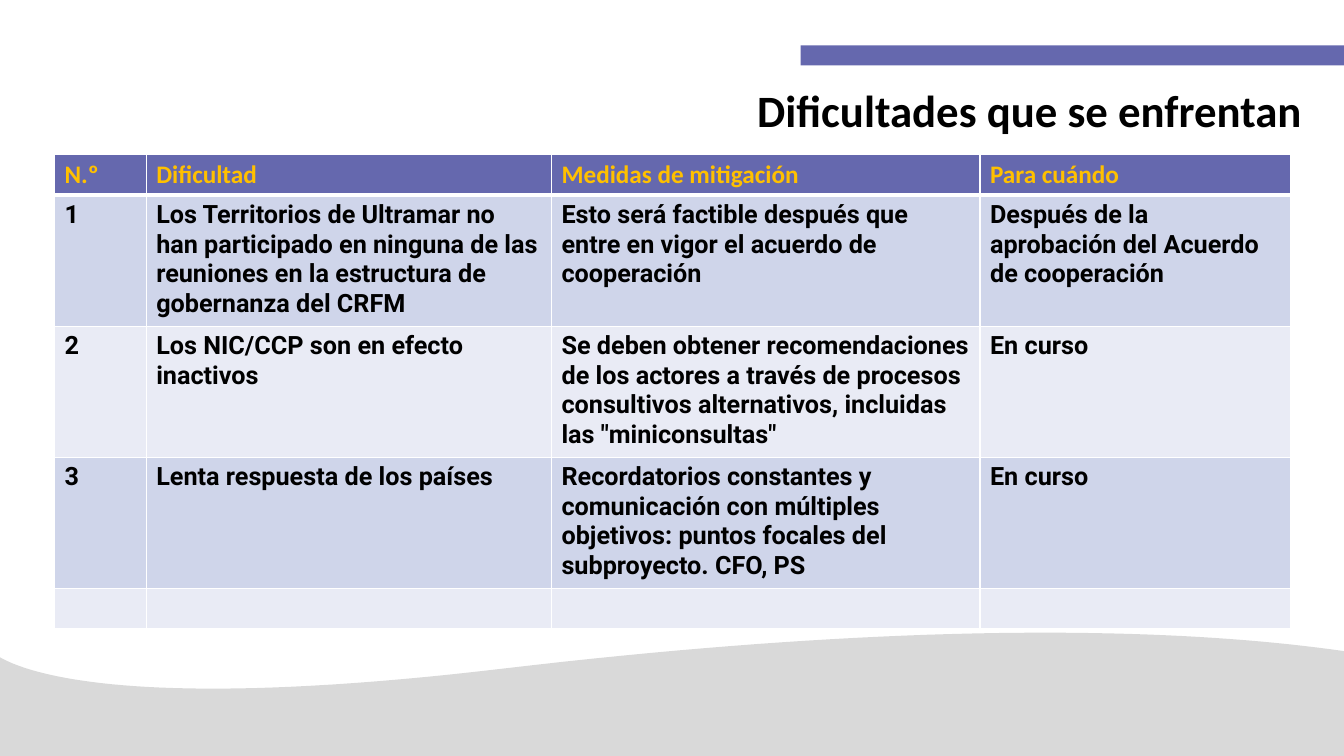
from lxml import etree
from pptx import Presentation
from pptx.dml.color import RGBColor
from pptx.enum import shapes, text
from pptx.oxml import ns
from pptx.util import Inches, Pt

PURPLE = RGBColor(0x65, 0x68, 0xAE)
GRAY = RGBColor(0xD9, 0xD9, 0xD9)
GOLD = RGBColor(0xFF, 0xC0, 0x00)
BLACK = RGBColor(0x00, 0x00, 0x00)
WHITE = RGBColor(0xFF, 0xFF, 0xFF)
BANDS = (RGBColor(0xE9, 0xEB, 0xF5), RGBColor(0xCF, 0xD5, 0xEA))

COLUMN_WIDTHS = (0.91, 4.02, 4.25, 3.08)
ROW_HEIGHTS = (0.4, 1.3, 1.3, 1.3, 0.4)
ROWS = (
    ("N.º", "Dificultad", "Medidas de mitigación", "Para cuándo"),
    ("1",
     "Los Territorios de Ultramar no han participado en ninguna de las reuniones "
     "en la estructura de gobernanza del CRFM",
     "Esto será factible después que entre en vigor el acuerdo de cooperación",
     "Después de la aprobación del Acuerdo de cooperación"),
    ("2",
     "Los NIC/CCP son en efecto inactivos",
     "Se deben obtener recomendaciones de los actores a través de procesos "
     "consultivos alternativos, incluidas las \"miniconsultas\"",
     "En curso"),
    ("3",
     "Lenta respuesta de los países",
     "Recordatorios constantes y comunicación con múltiples objetivos: "
     "puntos focales del subproyecto. CFO, PS",
     "En curso"),
    ("", "", "", ""),
)
WAVE_CURVES = (
    ((13.33, 6.46), (11.65, 6.22), (9.02, 6.16), (5.02, 6.63)),
    ((5.02, 6.63), (1.33, 7.07), (0.26, 6.68), (-0.02, 6.51)),
)


def curve_points(curve, steps=40):
    for step in range(1, steps + 1):
        t = step / steps
        weights = ((1 - t) ** 3, 3 * t * (1 - t) ** 2, 3 * t ** 2 * (1 - t), t ** 3)
        yield tuple(sum(w * point[axis] for w, point in zip(weights, curve))
                    for axis in (0, 1))


class SlideBuilder:
    title_font = "Calibri"
    body_font = "Roboto"

    def __init__(self, deck):
        self.slide = deck.slides.add_slide(deck.slide_layouts[5])

    def paint(self, shape, color):
        shape.shadow.inherit = False
        shape.fill.solid()
        shape.fill.fore_color.rgb = color
        shape.line.fill.background()

    def add_words(self, frame, words, font, size, color):
        span = frame.paragraphs[0].add_run()
        span.text = words
        span.font.name = font
        span.font.size = Pt(size)
        span.font.bold = True
        span.font.color.rgb = color

    def title(self, words, left, top, width, height):
        box = self.slide.shapes.title
        box.left, box.top = Inches(left), Inches(top)
        box.width, box.height = Inches(width), Inches(height)
        frame = box.text_frame
        frame.word_wrap = True
        frame.auto_size = text.MSO_AUTO_SIZE.NONE
        frame.vertical_anchor = text.MSO_ANCHOR.TOP
        frame.paragraphs[0].alignment = text.PP_ALIGN.LEFT
        self.add_words(frame, words, self.title_font, 32, BLACK)

    def bar(self, left, top, width, height, color):
        bar = self.slide.shapes.add_shape(
            shapes.MSO_SHAPE.RECTANGLE,
            Inches(left), Inches(top), Inches(width), Inches(height))
        self.paint(bar, color)

    def wave(self, curves, bottom, color):
        start, end = curves[0][0], curves[-1][-1]
        points = [start]
        for curve in curves:
            points.extend(curve_points(curve))
        points.append((end[0], bottom))
        outline = self.slide.shapes.build_freeform(
            Inches(start[0]), Inches(bottom), scale=1.0)
        outline.add_line_segments([(Inches(x), Inches(y)) for x, y in points])
        self.paint(outline.convert_to_shape(), color)

    def border(self, cell, side, width):
        properties = cell._tc.get_or_add_tcPr()
        line = etree.SubElement(properties, ns.qn(f"a:ln{side}"), w=str(Pt(width)))
        fill = etree.SubElement(line, ns.qn("a:solidFill"))
        etree.SubElement(fill, ns.qn("a:srgbClr"), val=str(WHITE))

    def table(self, rows, left, top, widths, heights):
        table = self.slide.shapes.add_table(
            len(rows), len(widths), Inches(left), Inches(top),
            Inches(sum(widths)), Inches(sum(heights))).table
        for column, width in zip(table.columns, widths):
            column.width = Inches(width)
        for row, height in zip(table.rows, heights):
            row.height = Inches(height)
        for row_index, row in enumerate(rows):
            header = row_index == 0
            for column_index, words in enumerate(row):
                cell = table.cell(row_index, column_index)
                self.border(cell, "L", 1)
                self.border(cell, "R", 1)
                self.border(cell, "T", 3 if row_index == 1 else 1)
                self.border(cell, "B", 3 if header else 1)
                cell.fill.solid()
                cell.fill.fore_color.rgb = PURPLE if header else BANDS[row_index % 2]
                if words:
                    self.add_words(cell.text_frame, words,
                                   self.title_font if header else self.body_font,
                                   18, GOLD if header else BLACK)


def main():
    deck = Presentation()
    deck.slide_width, deck.slide_height = Inches(13.33), Inches(7.5)
    page = SlideBuilder(deck)
    page.wave(WAVE_CURVES, 7.5, GRAY)
    page.bar(7.94, 0.45, 5.4, 0.2, PURPLE)
    page.table(ROWS, 0.54, 1.53, COLUMN_WIDTHS, ROW_HEIGHTS)
    page.title("Dificultades que se enfrentan", 7.41, 0.77, 5.84, 0.64)
    deck.save("out.pptx")


if __name__ == "__main__":
    main()
